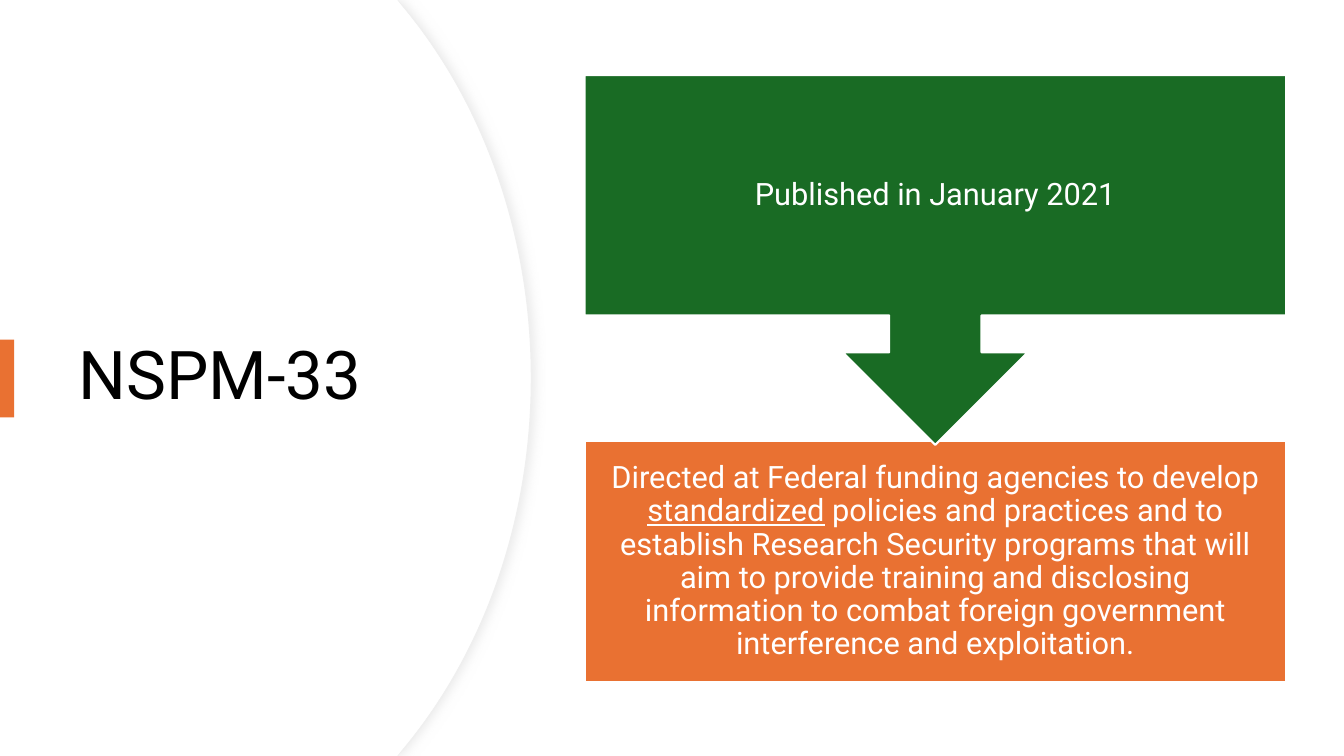
"""Build the NSPM-33 slide: a curved title panel and two linked steps."""
from dataclasses import dataclass

import lxml.etree
import pptx
import pptx.dml.color
import pptx.enum.shapes
import pptx.enum.text
import pptx.oxml.ns
import pptx.util

Cm = pptx.util.Cm
Pt = pptx.util.Pt
qn = pptx.oxml.ns.qn
Shape = pptx.enum.shapes.MSO_SHAPE
Align = pptx.enum.text.PP_ALIGN
Point = tuple[float, float]

COLORS = {
    "white": "FFFFFF",
    "black": "000000",
    "orange": "E97132",
    "green": "196B24",
    "edge": "EFEFEF",
    "shadow": "D9D9D9",
}
FONT = "Roboto"
WIDTH, HEIGHT = 33.87, 19.05
STEP_LEFT, STEP_WIDTH, STEP_HEIGHT = 14.73, 17.68, 6.07


@dataclass(frozen=True)
class TextRun:
    text: str
    underline: bool = False


@dataclass(frozen=True)
class Step:
    top: float
    shape_height: float
    kind: Shape
    rotation: float
    color: str
    runs: tuple[TextRun, ...]


@dataclass(frozen=True)
class Panel:
    right: float
    edge: str | None


STEPS = (
    Step(11.12, STEP_HEIGHT, Shape.RECTANGLE, 0, "orange", (
        TextRun("Directed at Federal funding agencies to develop "),
        TextRun("standardized", underline=True),
        TextRun(" policies and practices and to establish Research Security programs "
                "that will aim to provide training and disclosing information to combat "
                "foreign government interference and exploitation."),
    )),
    Step(1.89, 9.32, Shape.UP_ARROW_CALLOUT, 180, "green",
         (TextRun("Published in January 2021"),)),
)
PANELS = (Panel(13.39, "edge"), Panel(13.36, None))


def rgb(name: str) -> pptx.dml.color.RGBColor:
    return pptx.dml.color.RGBColor.from_string(COLORS[name])


def paint(shape, fill: str, line: str | None = None, line_width: float = 0) -> None:
    shape.shadow.inherit = False
    shape.fill.solid()
    shape.fill.fore_color.rgb = rgb(fill)
    if line is None:
        shape.line.fill.background()
    else:
        shape.line.color.rgb = rgb(line)
        shape.line.width = Pt(line_width)


def add_shadow(shape) -> None:
    effects = shape.element.spPr.find(qn("a:effectLst"))
    outer = lxml.etree.SubElement(
        effects, qn("a:outerShdw"), blurRad=str(Pt(7)), dist=str(Pt(3)),
        dir="0", algn="l", rotWithShape="0")
    color = lxml.etree.SubElement(outer, qn("a:srgbClr"), val=COLORS["shadow"])
    lxml.etree.SubElement(color, qn("a:alpha"), val="50000")


def bend(segment, controls: list[Point]) -> None:
    """Turn a straight segment into a cubic curve with the given control points."""
    end = segment.find(qn("a:pt"))
    curve = lxml.etree.Element(qn("a:cubicBezTo"))
    for x, y in controls:
        lxml.etree.SubElement(curve, qn("a:pt"), x=str(Cm(x)), y=str(Cm(y)))
    curve.append(end)
    segment.getparent().replace(segment, curve)


def add_panel(slide, panel: Panel) -> None:
    right = panel.right
    upper = [(10.01, 0), (right - 3.2, 0.2)]
    controls = [(right - 1.22, 2.59), (right, 5.89)]
    lower, mirrored = ([(x, HEIGHT - y) for x, y in reversed(points)]
                       for points in (upper, controls))
    corners = [*upper, (right, HEIGHT / 2), *lower, (0, HEIGHT)]
    builder = slide.shapes.build_freeform(0, 0)
    builder.add_line_segments([(Cm(x), Cm(y)) for x, y in corners], close=True)
    shape = builder.convert_to_shape()
    segments = list(shape.element.iter(qn("a:lnTo")))
    bend(segments[2], controls)
    bend(segments[3], mirrored)
    paint(shape, "white", panel.edge, 0.75)
    if panel.edge:
        add_shadow(shape)


def add_text(slide, left: float, top: float, width: float, height: float,
             runs: tuple[TextRun, ...], size: float, color: str,
             alignment: Align, inset: float) -> None:
    box = slide.shapes.add_textbox(Cm(left), Cm(top), Cm(width), Cm(height))
    frame = box.text_frame
    frame.word_wrap = True
    frame.vertical_anchor = pptx.enum.text.MSO_ANCHOR.MIDDLE
    frame.margin_left = frame.margin_right = Cm(inset)
    frame.margin_top = frame.margin_bottom = Cm(inset)
    paragraph = frame.paragraphs[0]
    paragraph.alignment = alignment
    paragraph.line_spacing = 0.9
    for text_run in runs:
        run = paragraph.add_run()
        run.text = text_run.text
        run.font.name = FONT
        run.font.size = Pt(size)
        run.font.color.rgb = rgb(color)
        run.font.underline = text_run.underline


def add_step(slide, step: Step) -> None:
    shape = slide.shapes.add_shape(
        step.kind, Cm(STEP_LEFT), Cm(step.top), Cm(STEP_WIDTH), Cm(step.shape_height))
    shape.rotation = step.rotation
    paint(shape, step.color, "white", 1.5)
    add_text(slide, STEP_LEFT, step.top, STEP_WIDTH, STEP_HEIGHT,
             step.runs, 22, "white", Align.CENTER, 0.43)


def main() -> None:
    presentation = pptx.Presentation()
    presentation.slide_width = Cm(WIDTH)
    presentation.slide_height = Cm(HEIGHT)
    slide = presentation.slides.add_slide(presentation.slide_layouts[6])
    for panel in PANELS:
        add_panel(slide, panel)
    add_text(slide, 1.73, 3.23, 10.01, 12.57, (TextRun("NSPM-33"),),
             48, "black", Align.LEFT, 0.25)
    accent = slide.shapes.add_shape(Shape.RECTANGLE, 0, Cm(8.56), Cm(0.36), Cm(1.96))
    paint(accent, "orange")
    for step in STEPS:
        add_step(slide, step)
    presentation.save("out.pptx")


if __name__ == "__main__":
    main()
